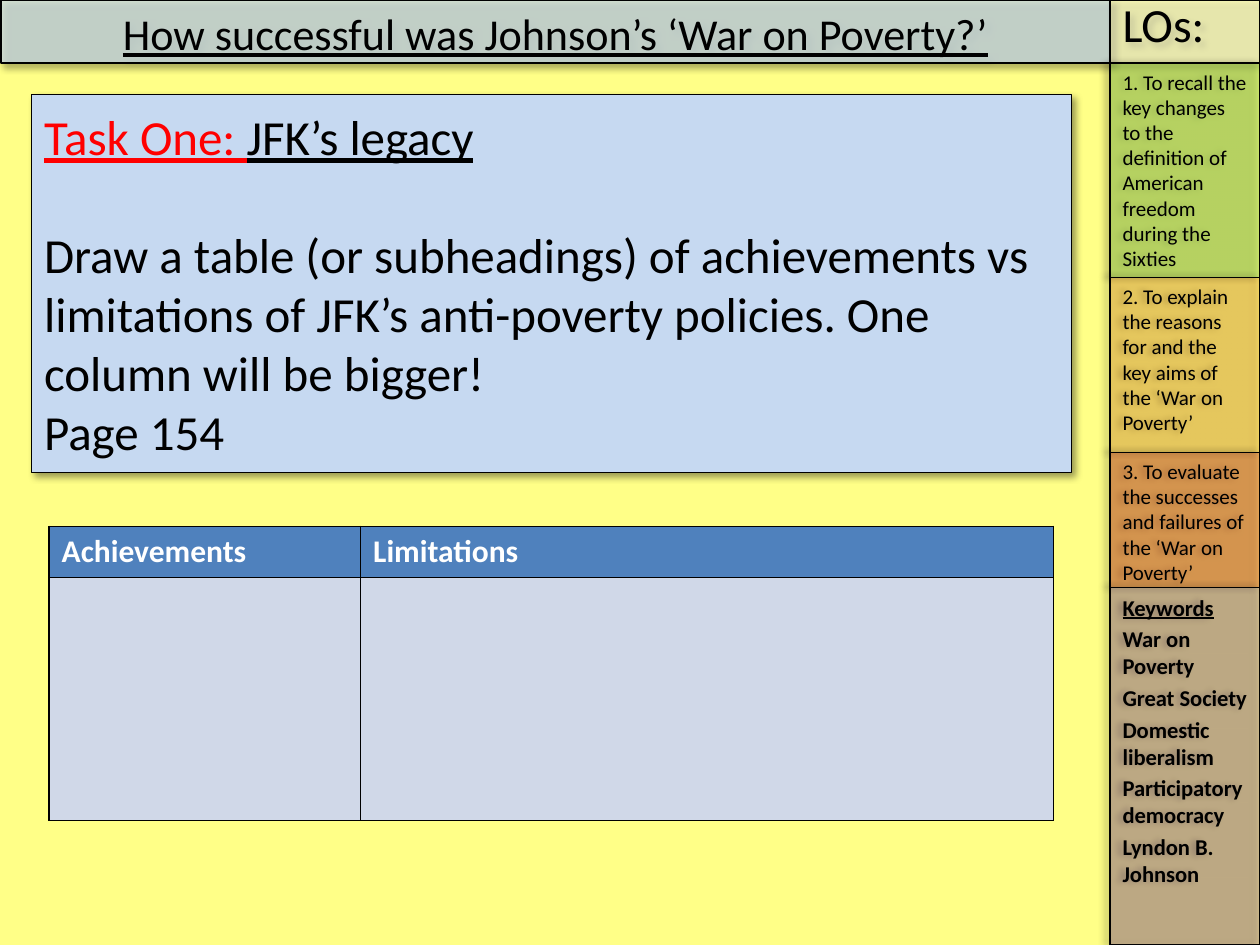
from lxml import etree
from pptx import Presentation
from pptx.dml.color import RGBColor
from pptx.enum.shapes import MSO_SHAPE
from pptx.enum.text import MSO_ANCHOR, PP_ALIGN
from pptx.oxml.ns import qn
from pptx.util import Cm, Pt

RECTANGLE = MSO_SHAPE.RECTANGLE
TOP, MIDDLE = MSO_ANCHOR.TOP, MSO_ANCHOR.MIDDLE
LEFT, CENTER = PP_ALIGN.LEFT, PP_ALIGN.CENTER

BLACK = RGBColor(0x00, 0x00, 0x00)
WHITE = RGBColor(0xFF, 0xFF, 0xFF)
RED = RGBColor(0xFF, 0x00, 0x00)
PALE_YELLOW = RGBColor(0xFF, 0xFF, 0x87)
PALE_BLUE = RGBColor(0xC6, 0xD9, 0xF1)
GREEN = RGBColor(0x92, 0xD0, 0x50)
ORANGE = RGBColor(0xE4, 0x6C, 0x0A)
DARK_RED = RGBColor(0xC0, 0x00, 0x00)
PURPLE = RGBColor(0x70, 0x30, 0xA0)
HEADER_BLUE = RGBColor(0x4F, 0x81, 0xBD)
BODY_BLUE = RGBColor(0xD0, 0xD8, 0xE8)


def add_xml(parent, tag, **attributes):
    values = {name: str(value) for name, value in attributes.items()}
    return etree.SubElement(parent, qn(tag), values)


def write(paragraph, text, size=12, color=BLACK, bold=False, underline=False,
          align=LEFT, before=0, line_spacing=None):
    """Append a formatted run to the paragraph and set the paragraph's layout."""
    paragraph.alignment = align
    paragraph.space_before = Pt(before)
    if line_spacing:
        paragraph.line_spacing = line_spacing
    run = paragraph.add_run()
    run.text = text
    font = run.font
    font.name, font.size = "Calibri", Pt(size)
    font.bold, font.underline = bold, underline
    font.color.rgb = color


class LessonSlide:
    def __init__(self, presentation, background):
        self.slide = presentation.slides.add_slide(presentation.slide_layouts[6])
        fill = self.slide.background.fill
        fill.solid()
        fill.fore_color.rgb = background

    def panel(self, left, top, width, height, color, opacity=100,
              shadow_angle=45, anchor=TOP):
        """Add an outlined box with a soft shadow and return its text frame."""
        box = self.slide.shapes.add_shape(
            RECTANGLE, Cm(left), Cm(top), Cm(width), Cm(height))
        box.fill.solid()
        box.fill.fore_color.rgb = color
        box.line.color.rgb = BLACK
        box.line.width = Pt(0.75)
        box.shadow.inherit = False
        properties = box._element.spPr
        if opacity < 100:
            add_xml(properties.find(qn("a:solidFill"))[0], "a:alpha",
                    val=opacity * 1000)
        shadow = add_xml(properties.find(qn("a:effectLst")), "a:outerShdw",
                         blurRad=Pt(4), dist=Pt(3), dir=shadow_angle * 60000,
                         algn="t", rotWithShape=0)
        add_xml(add_xml(shadow, "a:srgbClr", val=BLACK), "a:alpha", val=40000)
        frame = box.text_frame
        frame.word_wrap = True
        frame.vertical_anchor = anchor
        return frame

    def table(self, left, top, widths, heights, headings):
        table = self.slide.shapes.add_table(
            len(heights), len(widths), Cm(left), Cm(top),
            Cm(sum(widths)), Cm(sum(heights))).table
        for column, width in zip(table.columns, widths):
            column.width = Cm(width)
        for row, height in zip(table.rows, heights):
            row.height = Cm(height)
        for index, heading in enumerate(headings):
            write(table.cell(0, index).text_frame.paragraphs[0], heading,
                  size=18, color=WHITE, bold=True)
        for row_index, row in enumerate(table.rows):
            for cell in row.cells:
                self.border(cell)
                cell.fill.solid()
                cell.fill.fore_color.rgb = BODY_BLUE if row_index else HEADER_BLUE

    def border(self, cell):
        properties = cell._tc.get_or_add_tcPr()
        for side in ("a:lnL", "a:lnR", "a:lnT", "a:lnB"):
            edge = add_xml(properties, side, w=Pt(1))
            add_xml(add_xml(edge, "a:solidFill"), "a:srgbClr", val=BLACK)


def main():
    presentation = Presentation()
    presentation.slide_width, presentation.slide_height = Cm(25.4), Cm(19.05)
    lesson = LessonSlide(presentation, PALE_YELLOW)

    sidebar_left, sidebar_width, header_height = 22.38, 3.02, 1.27
    title = lesson.panel(0.02, 0, sidebar_left - 0.02, header_height, PALE_BLUE, 71)
    write(title.paragraphs[0], "How successful was Johnson’s ‘War on Poverty?’",
          size=25.2, underline=True, align=CENTER)
    outcomes = lesson.panel(sidebar_left, 0, sidebar_width, header_height, WHITE, 42)
    write(outcomes.paragraphs[0], "LOs:", size=27.2, line_spacing=0.8)

    sidebar = [
        (4.32, GREEN, 44, ["1. To recall the key changes to the definition of "
                           "American freedom during the Sixties"]),
        (3.53, ORANGE, 25, ["2. To explain the reasons for and the key aims of "
                            "the ‘War on Poverty’"]),
        (2.72, DARK_RED, 33, ["3. To evaluate the successes and failures of "
                              "the ‘War on Poverty’"]),
        (7.21, PURPLE, 31, ["Keywords", "War on Poverty", "Great Society",
                            "Domestic liberalism", "Participatory democracy",
                            "Lyndon B. Johnson"]),
    ]
    top = header_height
    for height, color, opacity, entries in sidebar:
        frame = lesson.panel(sidebar_left, top, sidebar_width, height, color,
                             opacity, shadow_angle=180)
        keywords = len(entries) > 1
        for index, entry in enumerate(entries):
            paragraph = frame.add_paragraph() if index else frame.paragraphs[0]
            write(paragraph, entry, size=12.9 if keywords else 12, bold=keywords,
                  underline=keywords and index == 0, before=2.6 if index else 0)
        top += height

    task = lesson.panel(0.64, 1.9, 20.96, 7.62, PALE_BLUE, anchor=MIDDLE)
    heading = task.paragraphs[0]
    write(heading, "Task One: ", size=28, color=RED, underline=True)
    write(heading, "JFK’s legacy", size=28, underline=True)
    write(task.add_paragraph(),
          "Draw a table (or subheadings) of achievements vs limitations of JFK’s "
          "anti-poverty policies. One column will be bigger!", size=28, before=34)
    write(task.add_paragraph(), "Page 154", size=28)

    lesson.table(0.99, 10.61, widths=(6.28, 13.97), heights=(1.03, 4.9),
                 headings=("Achievements", "Limitations"))
    presentation.save("out.pptx")


if __name__ == "__main__":
    main()
